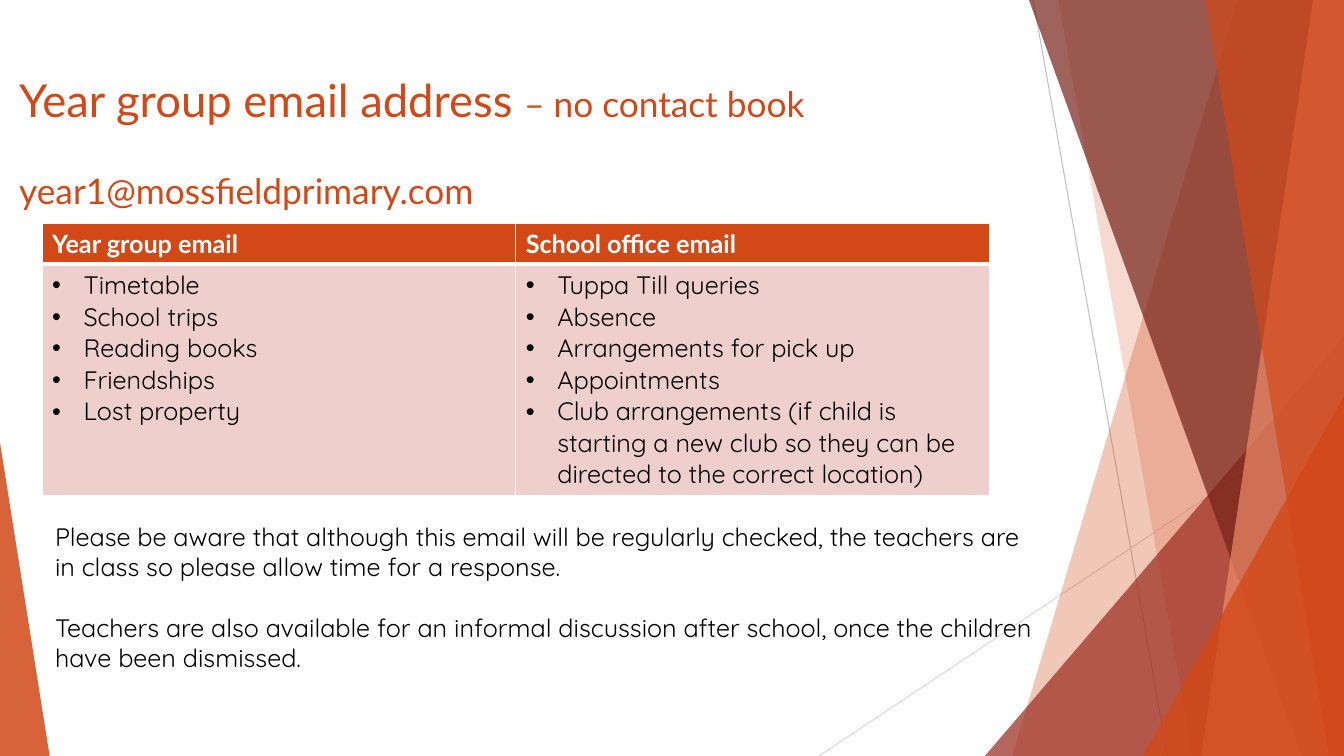
from lxml import etree
from pptx import Presentation
from pptx.dml.color import RGBColor
from pptx.enum.shapes import MSO_CONNECTOR, MSO_SHAPE
from pptx.enum.text import MSO_ANCHOR, PP_ALIGN
from pptx.oxml.ns import qn
from pptx.util import Pt

LINE = MSO_CONNECTOR.STRAIGHT
TRIANGLE = MSO_SHAPE.ISOSCELES_TRIANGLE
TOP = MSO_ANCHOR.TOP
LEFT = PP_ALIGN.LEFT

WIDE, HIGH = 960, 540
ORANGE, RED, WINE, PEACH = "D34817", "9B2D1F", "742217", "EF8C6A"
WHITE, BLACK, PINK = "FFFFFF", "000000", "EFCFCC"
HEAD, BODY = "Lato", "Quicksand"

TOPICS = {
    "Year group email": [
        "Timetable", "School trips", "Reading books", "Friendships", "Lost property",
    ],
    "School office email": [
        "Tuppa Till queries", "Absence", "Arrangements for pick up", "Appointments",
        "Club arrangements (if child is starting a new club so they can be "
        "directed to the correct location)",
    ],
}
NOTES = [
    "Please be aware that although this email will be regularly checked, "
    "the teachers are in class so please allow time for a response.",
    "Teachers are also available for an informal discussion after school, "
    "once the children have been dismissed.",
]


def color(code):
    """Turn a hex string into a colour."""
    return RGBColor.from_string(code)


def add_run(para, text, size, font, code, bold=False):
    """Add one formatted run to a paragraph."""
    run = para.add_run()
    run.text = text
    run.font.size = Pt(size)
    run.font.name = font
    run.font.bold = bold
    run.font.color.rgb = color(code)


def next_para(frame, index):
    """Return the first paragraph of a frame, or a new one after it."""
    return frame.add_paragraph() if index else frame.paragraphs[0]


def place(shape, left, top, width, height):
    """Move and size a shape."""
    shape.left, shape.top = Pt(left), Pt(top)
    shape.width, shape.height = Pt(width), Pt(height)


def paint(shape, code, alpha):
    """Fill a shape with a see-through colour and no outline."""
    shape.shadow.inherit = False
    shape.line.fill.background()
    shape.fill.solid()
    shape.fill.fore_color.rgb = color(code)
    tint = shape.fill._xPr.find(qn("a:solidFill"))[0]
    etree.SubElement(tint, qn("a:alpha"), val=str(alpha * 1000))


def add_line(slide, start, end, code):
    """Draw a thin straight line."""
    line = slide.shapes.add_connector(LINE, *map(Pt, start + end))
    line.line.color.rgb = color(code)
    line.line.width = Pt(0.75)
    etree.SubElement(line._element.spPr, qn("a:effectLst"))


def add_blade(slide, upper, lower, code, alpha):
    """Draw a slanted panel that reaches the right edge of the slide."""
    pen = slide.shapes.build_freeform(Pt(upper), 0)
    rest = [(WIDE, 0), (WIDE, HIGH), (lower, HIGH)]
    pen.add_line_segments([(Pt(x), Pt(y)) for x, y in rest])
    paint(pen.convert_to_shape(), code, alpha)


def add_wedge(slide, left, top, width, peak, code, alpha):
    """Draw a triangle that stands on the bottom edge of the slide."""
    wedge = slide.shapes.add_shape(TRIANGLE, Pt(left), Pt(top), Pt(width), Pt(HIGH - top))
    wedge.adjustments[0] = peak
    paint(wedge, code, alpha)


def add_facets(slide):
    """Draw the decoration at both sides."""
    add_line(slide, (738, 0), (834, HIGH), "BFBFBF")
    add_line(slide, (WIDE, 290), (585, HIGH), "D9D9D9")
    add_blade(slide, 884, 723, ORANGE, 30)
    add_blade(slide, 756, 852, ORANGE, 20)
    add_wedge(slide, 703.5, 240, 256.5, 1, RED, 72)
    add_blade(slide, 735, 930, WINE, 70)
    add_blade(slide, 938, 858, PEACH, 70)
    add_blade(slide, 861, 949, ORANGE, 65)
    add_wedge(slide, 816.5, 283, 143.5, 1, ORANGE, 80)
    add_wedge(slide, 0, 316, 35.5, 0, ORANGE, 85)


def set_title(slide):
    """Fill and place the title."""
    title = slide.shapes.title
    place(title, 6.5, 48.2, 723.5, 103.7)
    frame = title.text_frame
    frame.word_wrap = True
    frame.vertical_anchor = TOP
    first = next_para(frame, 0)
    add_run(first, "Year group email address ", 32.4, HEAD, ORANGE)
    add_run(first, "– no contact book", 25.2, HEAD, ORANGE)
    second = next_para(frame, 1)
    second.space_before = Pt(30)
    add_run(second, "year1@mossfieldprimary.com", 25.2, HEAD, ORANGE)
    for para in frame.paragraphs:
        para.alignment = LEFT


def add_bullet(para):
    """Give a paragraph a hanging bullet."""
    props = para._p.get_or_add_pPr()
    props.set("marL", str(Pt(22.5)))
    props.set("indent", str(-Pt(22.5)))
    etree.SubElement(props, qn("a:buFont"), typeface="Arial")
    etree.SubElement(props, qn("a:buChar"), char="•")


def style_cell(cell, code, base):
    """Fill a cell and give it white borders."""
    cell.fill.solid()
    cell.fill.fore_color.rgb = color(code)
    props = cell._tc.get_or_add_tcPr()
    for index, (side, width) in enumerate(zip("LRTB", (1, 1, 1, base))):
        edge = etree.Element(qn(f"a:ln{side}"), w=str(Pt(width)))
        fill = etree.SubElement(edge, qn("a:solidFill"))
        etree.SubElement(fill, qn("a:srgbClr"), val=WHITE)
        props.insert(index, edge)


def add_topics(slide):
    """Add the table of topics for each address."""
    frame = slide.shapes.add_table(2, len(TOPICS), Pt(30), Pt(159.5), Pt(676.8), Pt(193.5))
    table = frame.table
    table.horz_banding = False
    table.rows[0].height, table.rows[1].height = Pt(29.2), Pt(164.3)
    for col, (name, items) in enumerate(TOPICS.items()):
        head, body = table.cell(0, col), table.cell(1, col)
        style_cell(head, ORANGE, 3)
        style_cell(body, PINK, 1)
        add_run(next_para(head.text_frame, 0), name, 18, HEAD, WHITE, True)
        for index, item in enumerate(items):
            para = next_para(body.text_frame, index)
            add_bullet(para)
            add_run(para, item, 18, BODY, BLACK)


def add_notes(slide):
    """Add the advice below the table."""
    box = slide.shapes.add_textbox(Pt(32.2), Pt(368.8), Pt(713.5), Pt(138))
    frame = box.text_frame
    frame.word_wrap = True
    for index, note in enumerate(NOTES):
        para = next_para(frame, index)
        para.space_before = Pt(21.7 * index)
        add_run(para, note, 18, BODY, BLACK)


def main():
    """Build and save the slide."""
    deck = Presentation()
    deck.slide_width, deck.slide_height = Pt(WIDE), Pt(HIGH)
    slide = deck.slides.add_slide(deck.slide_layouts[5])
    add_facets(slide)
    set_title(slide)
    add_topics(slide)
    add_notes(slide)
    deck.save("out.pptx")


if __name__ == "__main__":
    main()
